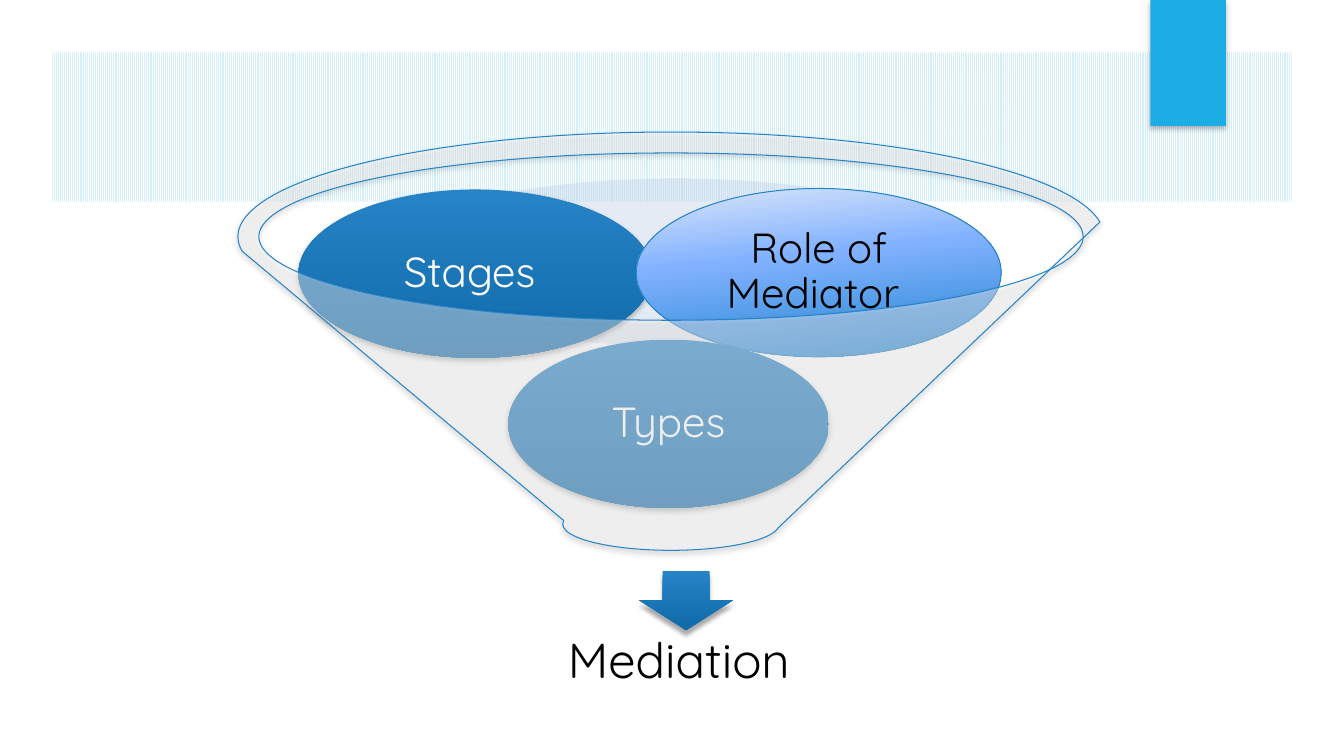
from dataclasses import dataclass

from pptx import Presentation
from pptx.dml.color import RGBColor
from pptx.enum import dml, shapes, text
from pptx.oxml import parse_xml
from pptx.oxml.ns import nsdecls, qn
from pptx.util import Inches, Pt


@dataclass(frozen=True)
class Theme:
    font: str = "Quicksand"
    label: int = 30
    result: int = 35
    white: str = "FFFFFF"
    black: str = "000000"
    stripe: str = "D2EFFA"
    glow: str = "F2F4F5"
    tab: str = "1CADE4"
    edge: str = "2683C6"
    deep: str = "116AAA"
    rim: str = "BECDE5"
    pale: str = "DAE6F9"
    mid: str = "82B2FF"
    base: str = "1E84CE"


T = Theme()
WIDE, HIGH = 13.33, 7.5
KIND = shapes.MSO_SHAPE

GLOWS = [
    (0, 2.92, 4.58, ((0, 11), (36, 10), (75, 0))),
    (0, 3.17, 2.58, ((0, 8), (36, 8), (72, 0))),
    (9.41, 1.83, 3.08, ((0, 7), (36, 6), (69, 0))),
    (8.75, 0, 1.75, ((0, 14), (36, 7), (73, 0))),
    (9.41, 6.42, 1.08, ((0, 14), (36, 7), (66, 0))),
]
SWOOSH = [
    (9.34, 2.5), (10.2, 2.48), (11.2, 2.38), (12.1, 2.27), (12.89, 2.14),
    (12.83, 1.66), (12.36, 1.81), (11.9, 1.94), (11.44, 2.06), (10.98, 2.16),
    (10.53, 2.25), (10.1, 2.32), (9.69, 2.38), (9.3, 2.43),
]
PANEL = [
    (0.5, 2.04), (0.5, 7), (12.84, 7), (12.84, 2.04), (12.28, 2.13),
    (11.72, 2.2), (11.16, 2.27), (10.6, 2.32), (10.04, 2.37), (9.49, 2.41),
    (8.94, 2.44), (8.4, 2.46), (7.86, 2.47), (7.34, 2.48), (6.82, 2.48),
    (6.32, 2.47), (5.83, 2.46), (5.35, 2.45), (4.88, 2.43), (4.44, 2.41),
    (4.01, 2.38), (3.21, 2.33), (2.49, 2.27), (1.87, 2.21), (1.35, 2.15),
    (0.94, 2.1),
]
BLUE = ((0, T.edge, 100), (100, T.deep, 100))
SHINE = ((0, T.pale, 100), (40, T.mid, 100), (100, T.base, 100))
SOFT = (28, 4, 2)
BALLS = [
    ("Types", (5.04, 3.37, 3.18, 1.67), BLUE, 90, T.white, None, SOFT),
    ("Stages ", (2.96, 1.88, 3.51, 1.67), BLUE, 90, T.white, None, SOFT),
    ("Role of Mediator ", (6.31, 1.87, 3.62, 1.67), SHINE, 84, T.black, T.edge, None),
]
RESULT = "Mediation "


def paint(shape, color, alpha=100, line=None, shade=None):
    shape.fill.solid()
    shape.fill.fore_color.rgb = RGBColor.from_string(color)
    if alpha < 100:
        tint = shape.fill._xPr.find(qn("a:solidFill"))[0]
        tint.append(parse_xml(f'<a:alpha {nsdecls("a")} val="{alpha * 1000}"/>'))
    if line:
        shape.line.color.rgb = RGBColor.from_string(line)
        shape.line.width = Pt(0.75)
    else:
        shape.line.fill.background()
    shape.shadow.inherit = False
    if shade:
        dark, blur, dist = shade
        list_el = shape._element.spPr.find(qn("a:effectLst"))
        list_el.append(parse_xml(
            f'<a:outerShdw {nsdecls("a")} blurRad="{Pt(blur)}" dist="{Pt(dist)}" '
            f'dir="5400000" algn="ctr" rotWithShape="0"><a:srgbClr val="{T.black}">'
            f'<a:alpha val="{dark * 1000}"/></a:srgbClr></a:outerShdw>'))


def blend(shape, stops, angle=None):
    marks = "".join(
        f'<a:gs pos="{pos * 1000}"><a:srgbClr val="{color}">'
        f'<a:alpha val="{alpha * 1000}"/></a:srgbClr></a:gs>'
        for pos, color, alpha in stops)
    if angle is None:
        sweep = ('<a:path path="circle"><a:fillToRect l="50000" t="50000" '
                 'r="50000" b="50000"/></a:path>')
    else:
        sweep = f'<a:lin ang="{angle * 60000}" scaled="0"/>'
    props = shape._element.spPr
    props.replace(props.find(qn("a:solidFill")), parse_xml(
        f'<a:gradFill {nsdecls("a")} rotWithShape="1">'
        f'<a:gsLst>{marks}</a:gsLst>{sweep}</a:gradFill>'))


def place(slide, kind, box, color, **look):
    shape = slide.shapes.add_shape(kind, *map(Inches, box))
    paint(shape, color, **look)
    return shape


def trace(slide, points, alpha=100):
    pen = slide.shapes.build_freeform(*points[0], scale=Inches(1))
    pen.add_line_segments(points[1:], close=True)
    paint(pen.convert_to_shape(), T.white, alpha)


def write(shape, words, size, color, inset):
    frame = shape.text_frame
    frame.word_wrap = True
    frame.vertical_anchor = text.MSO_ANCHOR.MIDDLE
    frame.margin_left = frame.margin_right = Inches(inset)
    frame.margin_top = frame.margin_bottom = Inches(inset)
    para = frame.paragraphs[0]
    para.alignment = text.PP_ALIGN.CENTER
    para.line_spacing = 0.9
    run = para.add_run()
    run.text = words
    run.font.name = T.font
    run.font.size = Pt(size)
    run.font.color.rgb = RGBColor.from_string(color)


def backdrop(slide):
    fill = slide.background.fill
    fill.patterned()
    fill.pattern = dml.MSO_PATTERN.LIGHT_VERTICAL
    fill.fore_color.rgb = RGBColor.from_string(T.stripe)
    fill.back_color.rgb = RGBColor.from_string(T.white)
    for left, top, side, fades in GLOWS:
        glow = place(slide, KIND.OVAL, (left, top, side, side), T.glow)
        blend(glow, [(pos, T.glow, alpha) for pos, alpha in fades])
    trace(slide, SWOOSH, 20)
    trace(slide, PANEL)
    border = place(slide, KIND.FRAME, (0, 0, WIDE, HIGH), T.white)
    border.adjustments[0] = 0.52 / HIGH
    place(slide, KIND.RECTANGLE, (11.41, 0, 0.75, 1.25), T.tab, shade=SOFT)


def funnel(slide):
    place(slide, KIND.OVAL, (3.72, 1.77, 5.95, 1.66), T.rim, alpha=40)
    arrow = place(slide, KIND.DOWN_ARROW, (6.34, 5.66, 0.93, 0.59), T.edge,
                  shade=(34, 3.5, 4))
    blend(arrow, BLUE, 90)
    label = slide.shapes.add_textbox(*map(Inches, (2.42, 6.02, 8.76, 1.11)))
    write(label, RESULT, T.result, T.black, 0.27)
    for words, box, stops, angle, ink, line, shade in BALLS:
        ball = place(slide, KIND.OVAL, box, T.edge, line=line, shade=shade)
        blend(ball, stops, angle)
        write(ball, words, T.label, ink, 0.04)
    place(slide, KIND.FUNNEL, (2.36, 1.31, 8.59, 4.15), T.white,
          alpha=40, line=T.edge, shade=SOFT)


def main():
    deck = Presentation()
    deck.slide_width, deck.slide_height = Inches(WIDE), Inches(HIGH)
    slide = deck.slides.add_slide(deck.slide_layouts[6])
    backdrop(slide)
    funnel(slide)
    deck.save("out.pptx")


if __name__ == "__main__":
    main()
